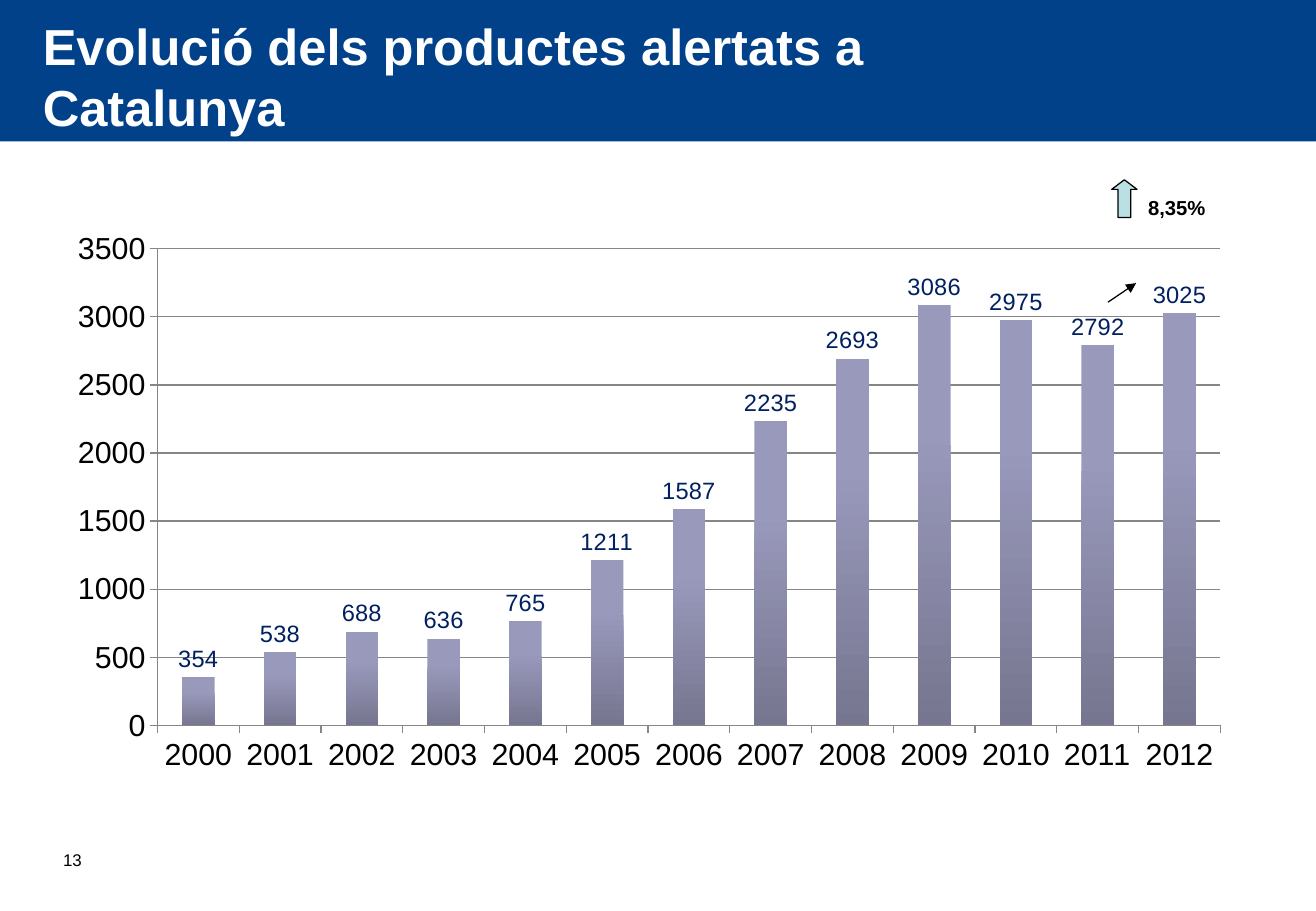
import pptx
import pptx.chart.data
import pptx.dml.color
import pptx.enum.chart
import pptx.enum.shapes
import pptx.enum.text
import pptx.oxml
import pptx.oxml.ns
import pptx.util

Cm = pptx.util.Cm
Pt = pptx.util.Pt
MIDDLE = pptx.enum.text.MSO_ANCHOR.MIDDLE
TOP = pptx.enum.text.MSO_ANCHOR.TOP

ALERTS = {
    2000: 354, 2001: 538, 2002: 688, 2003: 636, 2004: 765, 2005: 1211, 2006: 1587,
    2007: 2235, 2008: 2693, 2009: 3086, 2010: 2975, 2011: 2792, 2012: 3025,
}


def colour(code):
    return pptx.dml.color.RGBColor.from_string(code)


class AlertsSlide:
    """Holds the style and the current slide, and adds its elements."""

    font_name = "Arial"
    navy, black, white = "004189", "000000", "FFFFFF"
    label_blue, axis_grey, arrow_fill = "002060", "868686", "BBE0E3"
    bar_top, bar_bottom = "9999BC", "777690"

    def __init__(self, deck):
        self.page = deck.slides.add_slide(deck.slide_layouts[5])

    def style_font(self, font, size, code, bold=False):
        font.name, font.size, font.bold = self.font_name, Pt(size), bold
        font.color.rgb = colour(code)

    def style_line(self, line, code):
        line.color.rgb = colour(code)
        line.width = Pt(0.75)

    def fill_box(self, box, text, size, code, bold=False, anchor=MIDDLE):
        frame = box.text_frame
        frame.word_wrap = True
        frame.auto_size = pptx.enum.text.MSO_AUTO_SIZE.NONE
        frame.vertical_anchor = anchor
        para = frame.paragraphs[0]
        para.alignment = pptx.enum.text.PP_ALIGN.LEFT
        span = para.add_run()
        span.text = text
        self.style_font(span.font, size, code, bold)

    def title(self, text, left, top, width, height):
        box = self.page.shapes.title
        box.left, box.top, box.width, box.height = map(Cm, (left, top, width, height))
        self.fill_box(box, text, 30, self.white, bold=True)
        self.page.shapes.element.append(box.element)

    def text(self, text, left, top, width, height, size, bold=False, anchor=MIDDLE):
        box = self.page.shapes.add_textbox(*map(Cm, (left, top, width, height)))
        self.fill_box(box, text, size, self.black, bold, anchor)

    def shape(self, kind, left, top, width, height, fill, line=None):
        shape = self.page.shapes.add_shape(kind, *map(Cm, (left, top, width, height)))
        shape.shadow.inherit = False
        shape.fill.solid()
        shape.fill.fore_color.rgb = colour(fill)
        if line:
            self.style_line(shape.line, line)
        else:
            shape.line.fill.background()
        return shape

    def arrow(self, *ends):
        arrow = self.page.shapes.add_connector(
            pptx.enum.shapes.MSO_CONNECTOR.STRAIGHT, *map(Cm, ends))
        self.style_line(arrow.line, self.black)
        names = pptx.oxml.ns.nsdecls("a")
        properties = arrow.element.spPr
        properties.find(pptx.oxml.ns.qn("a:ln")).append(
            pptx.oxml.parse_xml(f'<a:tailEnd {names} type="triangle"/>'))
        properties.append(pptx.oxml.parse_xml(f'<a:effectLst {names}/>'))

    def columns(self, values, left, top, width, height):
        data = pptx.chart.data.CategoryChartData()
        data.categories = [str(year) for year in values]
        data.add_series("Series 1", values.values())
        chart = self.page.shapes.add_chart(
            pptx.enum.chart.XL_CHART_TYPE.COLUMN_CLUSTERED,
            *map(Cm, (left, top, width, height)), data).chart
        chart.has_legend = chart.has_title = False
        self.style_font(chart.font, 18, self.black)

        for axis in (chart.category_axis, chart.value_axis):
            axis.major_tick_mark = pptx.enum.chart.XL_TICK_MARK.OUTSIDE
            self.style_line(axis.format.line, self.axis_grey)
        scale = chart.value_axis
        scale.minimum_scale, scale.maximum_scale, scale.major_unit = 0, 3500, 500
        scale.has_major_gridlines = True
        self.style_line(scale.major_gridlines.format.line, self.axis_grey)

        plot = chart.plots[0]
        plot.gap_width = 150
        plot.vary_by_categories = False
        plot.has_data_labels = True
        labels = plot.data_labels
        labels.show_value = True
        labels.position = pptx.enum.chart.XL_LABEL_POSITION.OUTSIDE_END
        self.style_font(labels.font, 14, self.label_blue)

        fill = plot.series[0].format.fill
        fill.gradient()
        fill.gradient_angle = 270
        for stop, place, code in zip(
                fill.gradient_stops, (0.3, 1), (self.bar_top, self.bar_bottom)):
            stop.position = place
            stop.color.rgb = colour(code)
        self.place_plot(chart, x=0.09, y=0.07, w=0.9, h=0.79)

    def place_plot(self, chart, **frame):
        area = chart.element.chart.plotArea
        for old in area.findall(pptx.oxml.ns.qn("c:layout")):
            area.remove(old)
        modes = '<c:xMode val="edge"/><c:yMode val="edge"/>'
        sizes = "".join(f'<c:{key} val="{value}"/>' for key, value in frame.items())
        area.insert(0, pptx.oxml.parse_xml(
            f'<c:layout {pptx.oxml.ns.nsdecls("c")}><c:manualLayout>'
            f'<c:layoutTarget val="inner"/>{modes}{sizes}</c:manualLayout></c:layout>'))


def main():
    deck = pptx.Presentation()
    deck.slide_width, deck.slide_height = Cm(27.51), Cm(19.05)
    slide = AlertsSlide(deck)
    shapes = pptx.enum.shapes.MSO_SHAPE
    slide.shape(shapes.RECTANGLE, 0, 0, 27.51, 2.96, slide.navy)
    slide.text("13", 1.07, 17.35, 5.74, 1.27, 10)
    slide.title("Evolució dels productes alertats a Catalunya", 0.64, 0.64, 18.14, 1.9)
    slide.columns(ALERTS, 1.07, 4.32, 24.69, 12.62)
    slide.arrow(23.16, 6.32, 23.75, 5.92)
    growth = slide.shape(
        shapes.UP_ARROW, 23.24, 3.76, 0.53, 0.79, slide.arrow_fill, slide.black)
    growth.adjustments[1] = 0.38
    slide.text("8,35%", 23.75, 3.96, 2, 0.76, 12, bold=True, anchor=TOP)
    deck.save("out.pptx")


if __name__ == "__main__":
    main()
